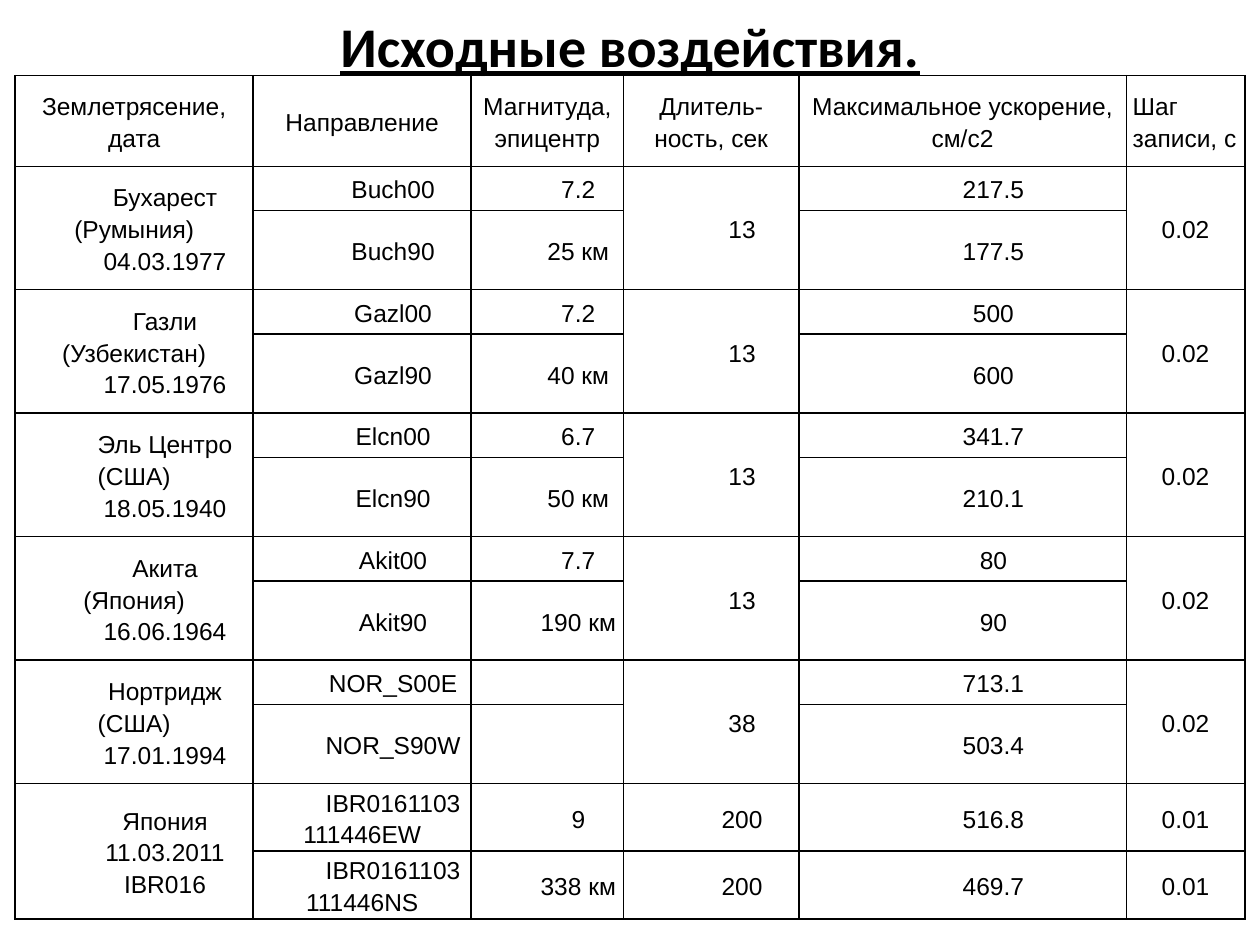
from dataclasses import dataclass

from lxml.etree import SubElement
from pptx import Presentation
from pptx.dml.color import RGBColor
from pptx.enum.text import MSO_ANCHOR, PP_ALIGN
from pptx.oxml.ns import qn
from pptx.util import Inches, Pt


@dataclass(frozen=True)
class Theme:
    ink: RGBColor = RGBColor(0, 0, 0)
    title_font: str = "Calibri"
    title_size: int = 32
    body_font: str = "Arial"
    body_size: int = 14
    border: int = 1
    line_spacing: float = 1.15
    indent: float = 0.49


THEME = Theme()

COL_WIDTHS = [1.89, 1.73, 1.21, 1.39, 2.6, 0.94]
ROW_HEIGHTS = [0.72] + [0.35, 0.63] * 5 + [0.53, 0.53]
HEADERS = ["Землетрясение, дата", "Направление", "Магнитуда, эпицентр",
           "Длитель-ность, сек", "Максимальное ускорение, см/с2",
           "Шаг записи, с"]
STEP_COL = len(HEADERS) - 1

# Each earthquake takes two rows; a single value spans both of them
QUAKES = [
    (["Бухарест (Румыния)\n04.03.1977"], ["Buch00", "Buch90"],
     ["7.2", "25 км"], ["13"], ["217.5", "177.5"], ["0.02"]),
    (["Газли (Узбекистан)\n17.05.1976"], ["Gazl00", "Gazl90"],
     ["7.2", "40 км"], ["13"], ["500", "600"], ["0.02"]),
    (["Эль Центро (США)\n18.05.1940"], ["Elcn00", "Elcn90"],
     ["6.7", "50 км"], ["13"], ["341.7", "210.1"], ["0.02"]),
    (["Акита (Япония)\n16.06.1964"], ["Akit00", "Akit90"],
     ["7.7", "190 км"], ["13"], ["80", "90"], ["0.02"]),
    (["Нортридж (США)\n17.01.1994"], ["NOR_S00E", "NOR_S90W"],
     ["", ""], ["38"], ["713.1", "503.4"], ["0.02"]),
    (["Япония\n11.03.2011\nIBR016"],
     ["IBR0161103111446EW", "IBR0161103111446NS"],
     ["9", "338 км"], ["200", "200"], ["516.8", "469.7"], ["0.01", "0.01"]),
]


def add_run(p, text, font, size):
    r = p.add_run()
    r.text = text
    r.font.name = font
    r.font.size = Pt(size)
    r.font.color.rgb = THEME.ink
    return r


def add_title(s, text):
    tf = s.shapes.add_textbox(Inches(0.35), 0, Inches(9.3), Inches(0.72)).text_frame
    tf.word_wrap = True
    tf.vertical_anchor = MSO_ANCHOR.MIDDLE
    p = tf.paragraphs[0]
    p.alignment = PP_ALIGN.CENTER
    r = add_run(p, text, THEME.title_font, THEME.title_size)
    r.font.bold = True
    r.font.underline = True


def style_cell(cell):
    cell.margin_left = cell.margin_right = Inches(0.05)
    cell.margin_top = cell.margin_bottom = 0
    cell.vertical_anchor = MSO_ANCHOR.MIDDLE
    # Borders come before the fill in the cell properties
    tc_pr = cell._tc.get_or_add_tcPr()
    for side in ("a:lnL", "a:lnR", "a:lnT", "a:lnB"):
        ln = SubElement(tc_pr, qn(side), w=str(Pt(THEME.border)))
        fill = SubElement(ln, qn("a:solidFill"))
        SubElement(fill, qn("a:srgbClr"), val=str(THEME.ink))
    cell.fill.background()


def write_cell(cell, text, align=PP_ALIGN.CENTER, indent=0):
    if not text:
        return
    tf = cell.text_frame
    for i, line in enumerate(text.split("\n")):
        p = tf.add_paragraph() if i else tf.paragraphs[0]
        p.alignment = align
        p.line_spacing = THEME.line_spacing
        if indent:
            p._p.get_or_add_pPr().set("marL", "0")
            p._p.get_or_add_pPr().set("indent", str(Inches(indent)))
        add_run(p, line, THEME.body_font, THEME.body_size)


def add_grid(s):
    table = s.shapes.add_table(
        len(ROW_HEIGHTS), len(COL_WIDTHS), Inches(0.12), Inches(0.6),
        Inches(sum(COL_WIDTHS)), Inches(sum(ROW_HEIGHTS))).table
    table.first_row = table.horz_banding = False
    for col, width in zip(table.columns, COL_WIDTHS):
        col.width = Inches(width)
    for row, height in zip(table.rows, ROW_HEIGHTS):
        row.height = Inches(height)
    for cell in table.iter_cells():
        style_cell(cell)
    return table


def fill_grid(table):
    # Header row
    for c, text in enumerate(HEADERS):
        align = PP_ALIGN.LEFT if c == STEP_COL else PP_ALIGN.CENTER
        write_cell(table.cell(0, c), text, align)
    # Pairs of rows
    for i, quake in enumerate(QUAKES):
        top = 1 + 2 * i
        for c, values in enumerate(quake):
            if len(values) == 1:
                table.cell(top, c).merge(table.cell(top + 1, c))
            indent = 0 if c == STEP_COL else THEME.indent
            for k, text in enumerate(values):
                write_cell(table.cell(top + k, c), text, indent=indent)


def main():
    prs = Presentation()
    prs.slide_width, prs.slide_height = Inches(10), Inches(7.5)
    s = prs.slides.add_slide(prs.slide_layouts[6])
    add_title(s, "Исходные воздействия.")
    fill_grid(add_grid(s))
    prs.save("out.pptx")


if __name__ == "__main__":
    main()
